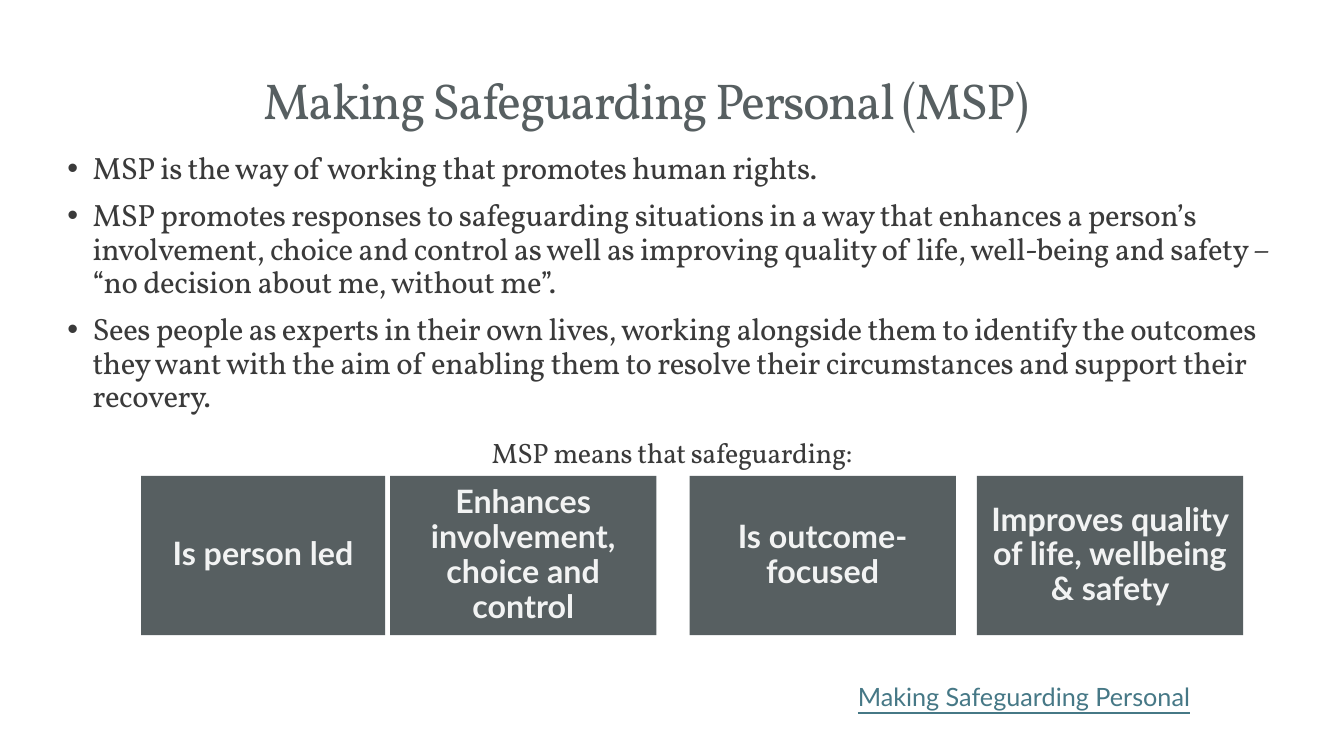
from dataclasses import dataclass

from pptx import Presentation
from pptx import util as u
from pptx.dml.color import RGBColor
from pptx.enum import shapes, text
from lxml import etree
from pptx.oxml.ns import qn

PX = 9144
SLATE = RGBColor(0x57, 0x5F, 0x61)
INK = RGBColor(0x3A, 0x3A, 0x3A)
PALE = RGBColor(0xF2, 0xF3, 0xF3)
LINK = RGBColor(0x46, 0x78, 0x86)
SERIF = "Vollkorn"
SANS = "Lato"
CARD_TOP = 472
CARD_HEIGHT = 158


@dataclass(frozen=True)
class Style:
    font: str
    size: int
    color: RGBColor
    bold: bool = False
    underline: bool = False
    tracking: int = 0


@dataclass(frozen=True)
class Line:
    words: str
    style: Style
    before: int = 0
    after: int = 0
    centered: bool = True
    bullet: bool = False
    spacing: float = 0.9


@dataclass(frozen=True)
class Card:
    words: str
    left: int
    width: int = 264
    inset: int = 7


TITLE = Style(SERIF, 36, SLATE, tracking=-120)
BODY = Style(SERIF, 22, INK, tracking=-30)
LEAD_IN = Style(SERIF, 20, INK, tracking=-30)
CARD = Style(SANS, 23, PALE, bold=True)
REFERENCE = Style(SANS, 18, LINK, underline=True)

BODY_LINES = [
    Line("MSP is the way of working that promotes human rights.",
         BODY, centered=False, bullet=True),
    Line("MSP promotes responses to safeguarding situations in a way that enhances "
         "a person’s involvement, choice and control as well as improving quality of "
         "life, well-being and safety – “no decision about me, without me”.",
         BODY, before=10, centered=False, bullet=True),
    Line("Sees people as experts in their own lives, working alongside them to "
         "identify the outcomes they want with the aim of enabling them to resolve "
         "their circumstances and support their recovery.",
         BODY, before=10, after=6, centered=False, bullet=True),
    Line("MSP means that safeguarding:", LEAD_IN, before=12),
]

CARDS = [
    Card("Is person led", 140, width=242, inset=10),
    Card("Enhances involvement, choice and control", 387),
    Card("Is outcome-focused", 684),
    Card("Improves quality of life, wellbeing & safety", 969),
]


def px(length: int) -> u.Emu:
    return u.Emu(length * PX)


def add_bullet(para) -> None:
    properties = para._p.get_or_add_pPr()
    properties.set("marL", str(px(25)))
    properties.set("indent", str(px(-25)))
    etree.SubElement(properties, qn("a:buFont")).set("typeface", "Arial")
    etree.SubElement(properties, qn("a:buChar")).set("char", "•")


def write_line(para, line: Line) -> None:
    para.text = line.words
    para.alignment = text.PP_ALIGN.CENTER if line.centered else text.PP_ALIGN.LEFT
    para.line_spacing = line.spacing
    para.space_before = u.Pt(line.before)
    para.space_after = u.Pt(line.after)
    if line.bullet:
        add_bullet(para)
    for span in para.runs:
        span.font.name = line.style.font
        span.font.size = u.Pt(line.style.size)
        span.font.bold = line.style.bold
        span.font.underline = line.style.underline
        span.font.color.rgb = line.style.color
        if line.style.tracking:
            span.font._element.set("spc", str(line.style.tracking))


def add_text(page, left: int, top: int, width: int, height: int, lines: list[Line]):
    box = page.shapes.add_textbox(px(left), px(top), px(width), px(height))
    frame = box.text_frame
    frame.word_wrap = True
    for index, line in enumerate(lines):
        para = frame.add_paragraph() if index else frame.paragraphs[0]
        write_line(para, line)
    return box


def add_card(page, card: Card) -> None:
    box = page.shapes.add_shape(
        shapes.MSO_SHAPE.RECTANGLE,
        px(card.left), px(CARD_TOP), px(card.width), px(CARD_HEIGHT))
    box.shadow.inherit = False
    box.fill.solid()
    box.fill.fore_color.rgb = SLATE
    box.line.fill.background()
    frame = box.text_frame
    frame.word_wrap = True
    frame.vertical_anchor = text.MSO_ANCHOR.MIDDLE
    frame.margin_left = frame.margin_right = px(card.inset)
    frame.margin_top = frame.margin_bottom = px(card.inset)
    write_line(frame.paragraphs[0], Line(card.words, CARD))


def main() -> None:
    deck = Presentation()
    deck.slide_width, deck.slide_height = px(1333), px(750)
    page = deck.slides.add_slide(deck.slide_layouts[6])

    title = add_text(page, 92, 70, 1116, 50,
                     [Line("Making Safeguarding Personal (MSP)", TITLE)])
    title.text_frame.margin_right = px(28)
    add_text(page, 57, 147, 1219, 502, BODY_LINES)
    for card in CARDS:
        add_card(page, card)
    add_text(page, 841, 671, 386, 40,
             [Line("Making Safeguarding Personal", REFERENCE,
                   centered=False, spacing=1.0)])

    deck.save("out.pptx")


if __name__ == "__main__":
    main()
